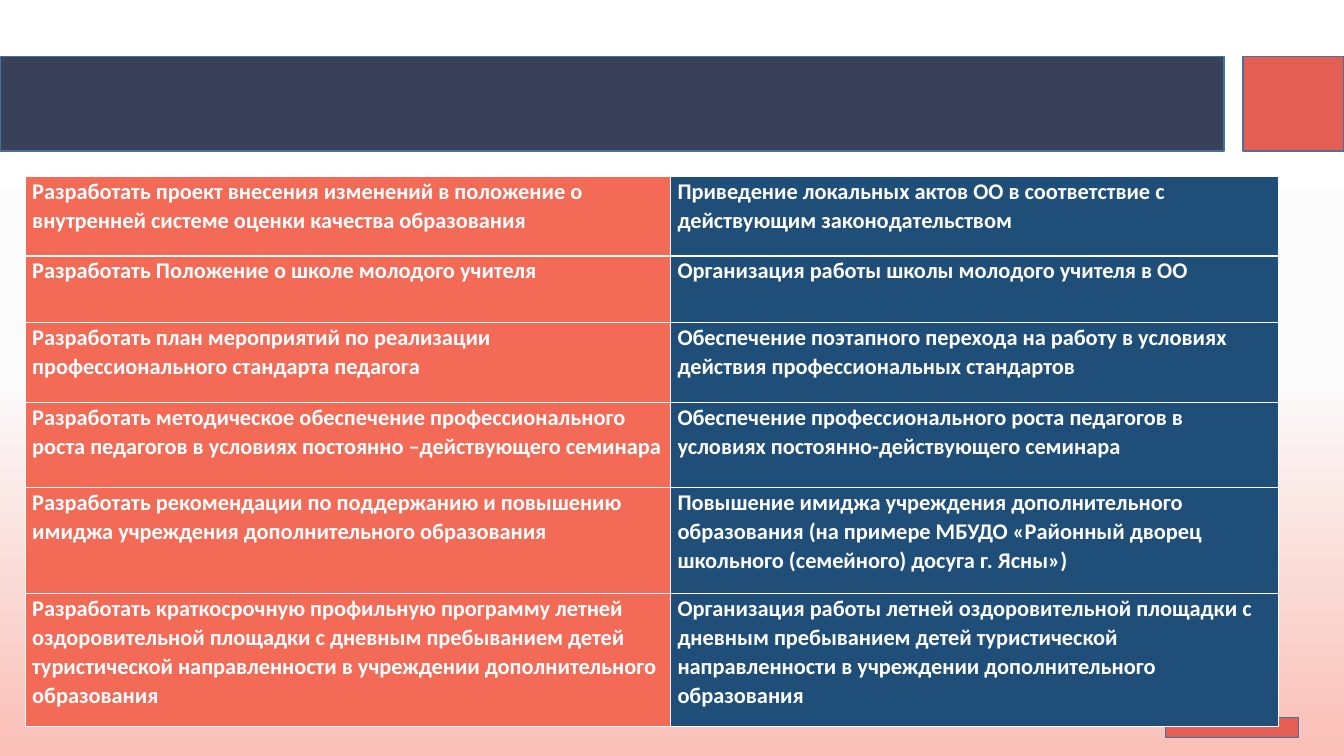
from lxml.etree import SubElement
from pptx import Presentation
from pptx.dml.color import RGBColor
from pptx.enum.shapes import MSO_SHAPE as Shape
from pptx.oxml.ns import qn
from pptx.util import Inches, Pt

WHITE = RGBColor(0xFF, 0xFF, 0xFF)
OFF_WHITE = RGBColor(0xFB, 0xFB, 0xFB)
PINK = RGBColor(0xFA, 0xBF, 0xB7)
NAVY = RGBColor(0x3A, 0x40, 0x58)
RED = RGBColor(0xE5, 0x5E, 0x54)
OUTLINE = RGBColor(0x43, 0x73, 0x9E)
CORAL = RGBColor(0xF3, 0x6A, 0x57)
BLUE = RGBColor(0x1F, 0x4E, 0x79)

COLUMN_WIDTHS = (6.4, 6.03)
COLUMN_FILLS = (CORAL, BLUE)
ROW_HEIGHTS = (0.79, 0.66, 0.79, 0.85, 1.05, 1.32)
TASKS = (
    ("Разработать проект внесения изменений в положение о внутренней системе оценки качества образования",
     "Приведение локальных актов ОО в соответствие с действующим законодательством"),
    ("Разработать Положение о школе молодого учителя",
     "Организация работы школы молодого учителя в ОО"),
    ("Разработать план мероприятий по реализации профессионального стандарта педагога",
     "Обеспечение поэтапного перехода на работу в условиях действия профессиональных стандартов"),
    ("Разработать методическое обеспечение профессионального роста педагогов "
     "в условиях постоянно –действующего семинара",
     "Обеспечение профессионального роста педагогов в условиях постоянно-действующего семинара"),
    ("Разработать рекомендации по поддержанию и повышению имиджа учреждения дополнительного образования",
     "Повышение имиджа учреждения дополнительного образования "
     "(на примере МБУДО «Районный дворец школьного (семейного) досуга г. Ясны»)"),
    ("Разработать краткосрочную профильную программу летней оздоровительной площадки с дневным "
     "пребыванием детей туристической направленности в учреждении дополнительного образования",
     "Организация работы летней оздоровительной площадки с дневным пребыванием детей "
     "туристической направленности в учреждении дополнительного образования"),
)


def paint_background(slide):
    """Fill the background with a vertical three-stop gradient."""
    fill = slide.background.fill
    fill.gradient()
    fill.gradient_angle = 270
    stops = slide.element.find(".//" + qn("a:gsLst"))
    stops.clear()
    for position, color in ((0, WHITE), (50, OFF_WHITE), (100, PINK)):
        stop = SubElement(stops, qn("a:gs"), pos=str(position * 1000))
        SubElement(stop, qn("a:srgbClr"), val=str(color))


def add_block(slide, left, top, width, height, color):
    """Add an outlined rectangle."""
    shape = slide.shapes.add_shape(
        Shape.RECTANGLE, Inches(left), Inches(top), Inches(width), Inches(height))
    shape.shadow.inherit = False
    shape.fill.solid()
    shape.fill.fore_color.rgb = color
    shape.line.color.rgb = OUTLINE
    shape.line.width = Pt(1)


def add_header(slide, left, top, width, height):
    """Add the title band and the accent block at its right end."""
    accent, gap = 1, 0.19
    add_block(slide, left + width - accent, top, accent, height, RED)
    add_block(slide, left, top, width - accent - gap, height, NAVY)


def add_borders(cell, color, width):
    """Draw a solid line on all four sides of a cell."""
    properties = cell._tc.get_or_add_tcPr()
    for side in ("lnL", "lnR", "lnT", "lnB"):
        line = SubElement(properties, qn("a:" + side), w=str(Pt(width)))
        fill = SubElement(line, qn("a:solidFill"))
        SubElement(fill, qn("a:srgbClr"), val=str(color))


def write_text(cell, text, size=16, bold=True, color=WHITE, font="Calibri", spacing=1.06):
    """Write formatted text in a cell."""
    paragraph = cell.text_frame.paragraphs[0]
    paragraph.line_spacing = spacing
    run = paragraph.add_run()
    run.text = text
    run.font.size = Pt(size)
    run.font.bold = bold
    run.font.name = font
    run.font.color.rgb = color


def add_task_table(slide, left, top):
    """Add the table of tasks and their expected results."""
    table = slide.shapes.add_table(
        len(TASKS), len(COLUMN_WIDTHS), Inches(left), Inches(top),
        Inches(sum(COLUMN_WIDTHS)), Inches(sum(ROW_HEIGHTS))).table
    for column, width in zip(table.columns, COLUMN_WIDTHS):
        column.width = Inches(width)
    for row, height, texts in zip(table.rows, ROW_HEIGHTS, TASKS):
        row.height = Inches(height)
        for cell, text, color in zip(row.cells, texts, COLUMN_FILLS):
            cell.margin_left = cell.margin_right = Inches(0.07)
            cell.margin_top = cell.margin_bottom = 0
            add_borders(cell, WHITE, 1)
            cell.fill.solid()
            cell.fill.fore_color.rgb = color
            write_text(cell, text)


def main():
    """Build and save the presentation."""
    presentation = Presentation()
    presentation.slide_width = Inches(13.33)
    presentation.slide_height = Inches(7.5)
    slide = presentation.slides.add_slide(presentation.slide_layouts[6])
    paint_background(slide)
    add_header(slide, 0, 0.56, 13.33, 0.94)
    add_block(slide, 11.56, 7.12, 1.32, 0.2, RED)
    add_task_table(slide, 0.25, 1.75)
    presentation.save("out.pptx")


if __name__ == "__main__":
    main()
